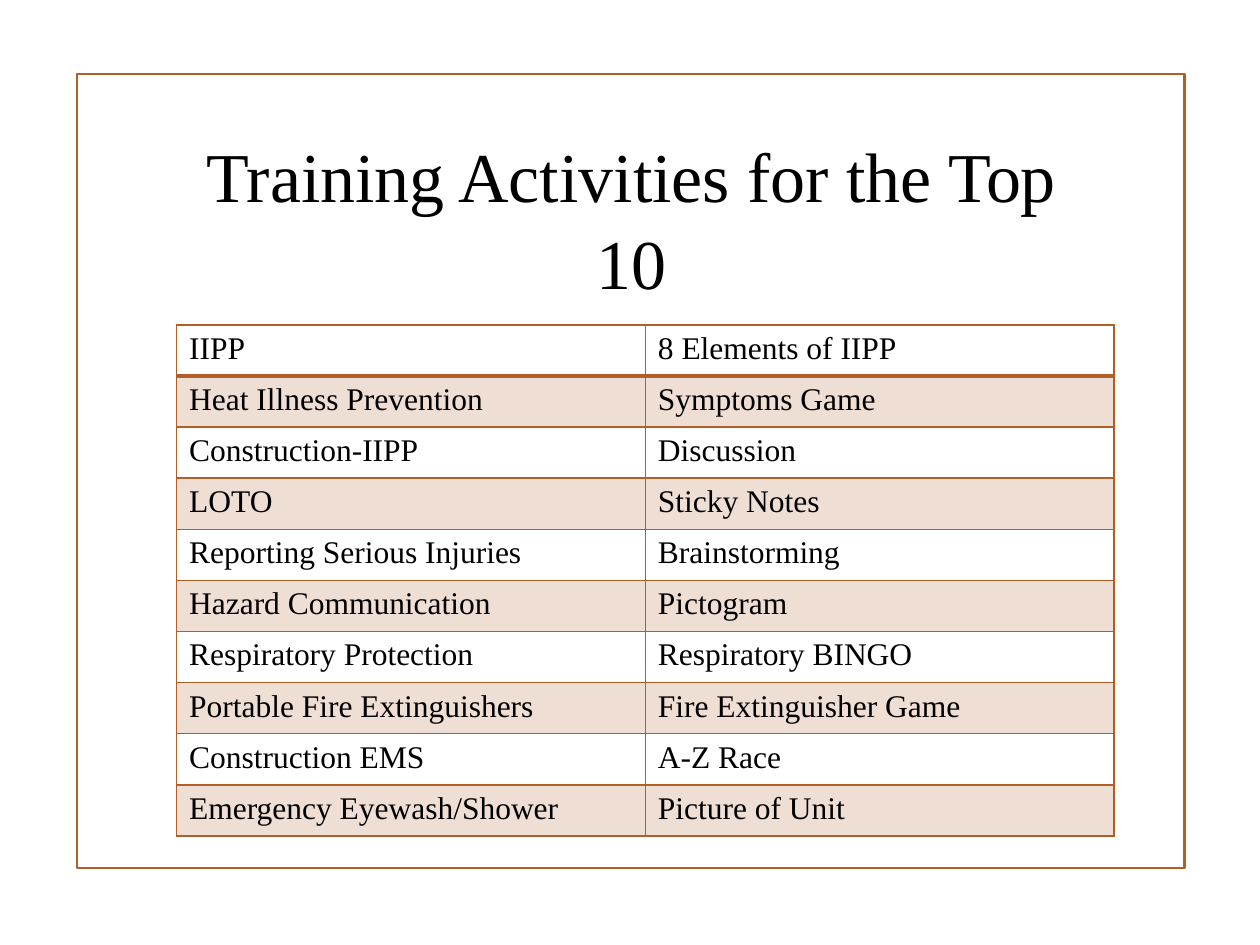
from lxml import etree
from pptx import Presentation
from pptx.dml.color import RGBColor
from pptx.enum.shapes import MSO_CONNECTOR as Connector, MSO_SHAPE as Shape
from pptx.enum.text import MSO_ANCHOR as Anchor, MSO_AUTO_SIZE as AutoSize, PP_ALIGN as Align
from pptx.oxml.ns import qn
from pptx.util import Cm, Pt

RUST = RGBColor(0xB1, 0x5E, 0x28)
BLACK = RGBColor(0x00, 0x00, 0x00)
FONT = "Times New Roman"
BAND_ALPHA = 20

ACTIVITIES = [
    ("IIPP", "8 Elements of IIPP"),
    ("Heat Illness Prevention", "Symptoms Game"),
    ("Construction-IIPP", "Discussion"),
    ("LOTO", "Sticky Notes"),
    ("Reporting Serious Injuries", "Brainstorming"),
    ("Hazard Communication", "Pictogram"),
    ("Respiratory Protection", "Respiratory BINGO"),
    ("Portable Fire Extinguishers", "Fire Extinguisher Game"),
    ("Construction EMS", "A-Z Race"),
    ("Emergency Eyewash/Shower", "Picture of Unit"),
]


def add_text(paragraph, text, size):
    run = paragraph.add_run()
    run.text = text
    run.font.name = FONT
    run.font.size = Pt(size)
    run.font.color.rgb = BLACK


def add_frame(slide, left, top, width, height):
    frame = slide.shapes.add_shape(Shape.RECTANGLE, left, top, width, height)
    frame.shadow.inherit = False
    frame.fill.background()
    frame.line.color.rgb = RUST
    frame.line.width = Pt(1.25)


def add_rule(slide, left, top, width):
    rule = slide.shapes.add_connector(Connector.STRAIGHT, left, top, left + width, top)
    rule.line.color.rgb = RUST
    rule.line.width = Pt(1.25)
    etree.SubElement(rule._element.spPr, qn("a:effectLst"))


def place_title(slide, text, left, top, width, height):
    title = slide.shapes.title
    title.left, title.top, title.width, title.height = left, top, width, height
    text_frame = title.text_frame
    text_frame.word_wrap = True
    text_frame.auto_size = AutoSize.NONE
    text_frame.vertical_anchor = Anchor.MIDDLE
    paragraph = text_frame.paragraphs[0]
    paragraph.alignment = Align.CENTER
    paragraph.line_spacing = 1.04
    add_text(paragraph, text, 40)


def set_border(cell, side, points):
    properties = cell._tc.get_or_add_tcPr()
    border = etree.SubElement(properties, qn(f"a:ln{side}"), w=str(Pt(points)))
    fill = etree.SubElement(border, qn("a:solidFill"))
    etree.SubElement(fill, qn("a:srgbClr"), val=str(RUST))


def set_cell_fill(cell, banded):
    if not banded:
        cell.fill.background()
        return
    cell.fill.solid()
    cell.fill.fore_color.rgb = RUST
    color = cell._tc.tcPr.find(qn("a:solidFill")).find(qn("a:srgbClr"))
    etree.SubElement(color, qn("a:alpha"), val=str(BAND_ALPHA * 1000))


def add_activity_table(slide, left, top, width, height):
    row_count, column_count = len(ACTIVITIES), len(ACTIVITIES[0])
    table = slide.shapes.add_table(row_count, column_count, left, top, width, height).table
    table.first_row = False
    table.horz_banding = False
    for row_index, row in enumerate(ACTIVITIES):
        for column_index, text in enumerate(row):
            cell = table.cell(row_index, column_index)
            add_text(cell.text_frame.paragraphs[0], text, 18)
            for side in "LRTB":
                under_header = (row_index, side) in ((0, "B"), (1, "T"))
                set_border(cell, side, 2 if under_header else 1)
            set_cell_fill(cell, banded=row_index % 2 == 1)


def main():
    presentation = Presentation()
    presentation.slide_width = Cm(25.4)
    presentation.slide_height = Cm(19.05)
    slide = presentation.slides.add_slide(presentation.slide_layouts[5])
    add_frame(slide, Cm(1.55), Cm(1.5), Cm(22.33), Cm(16))
    add_rule(slide, Cm(3.56), Cm(6.55), Cm(18.31))
    place_title(slide, "Training Activities for the Top 10",
                Cm(3.28), Cm(2.54), Cm(18.9), Cm(3.63))
    add_activity_table(slide, Cm(3.56), Cm(6.55), Cm(18.9), Cm(10.3))
    presentation.save("out.pptx")


if __name__ == "__main__":
    main()
